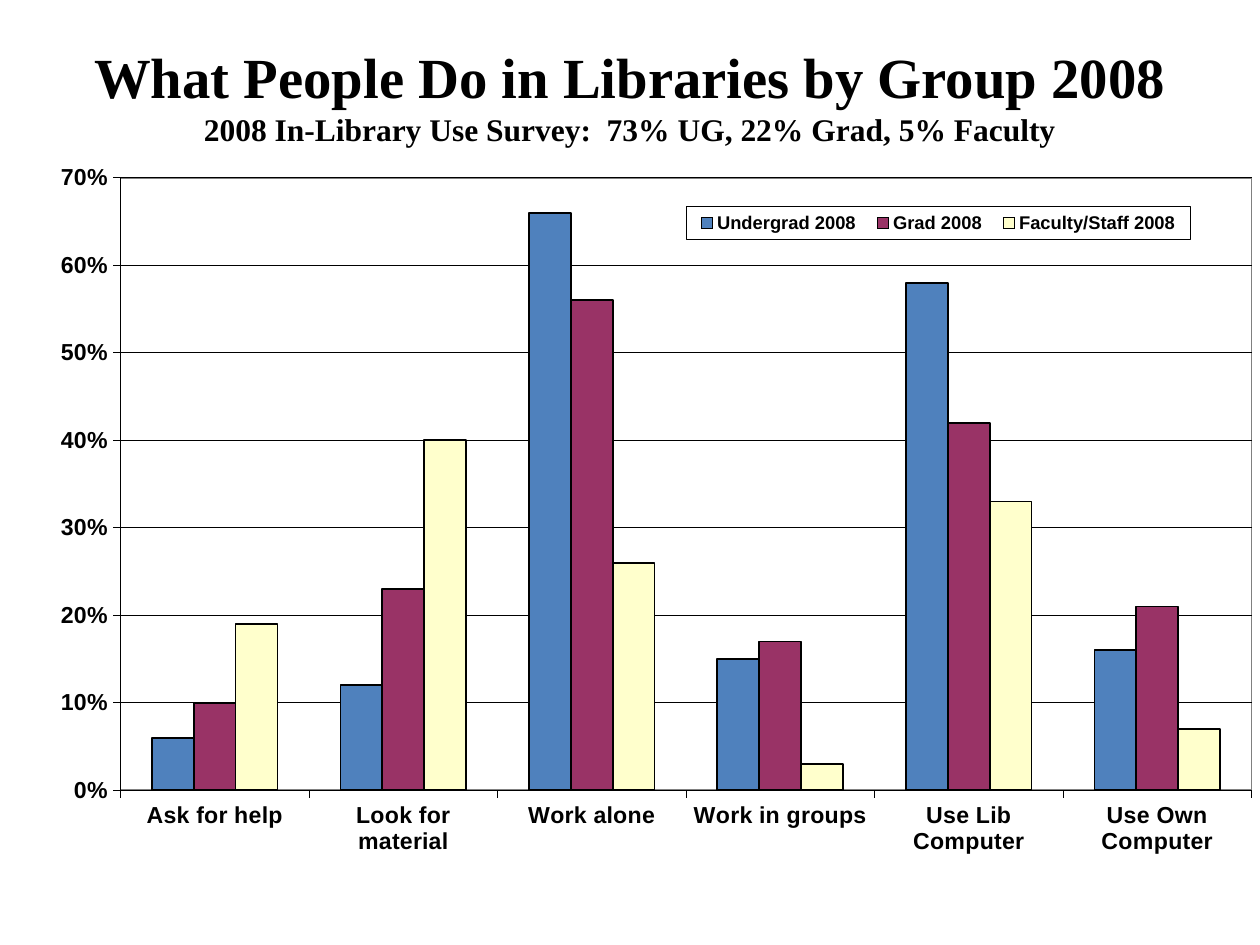
from pptx import Presentation
from pptx.chart.data import CategoryChartData
from pptx.dml.color import RGBColor
from pptx.enum.chart import XL_CHART_TYPE, XL_LEGEND_POSITION, XL_TICK_MARK
from pptx.enum.text import MSO_ANCHOR, PP_ALIGN
from pptx.oxml import parse_xml
from pptx.oxml.ns import nsdecls, qn
from pptx.util import Inches, Pt

rgb = RGBColor.from_string
BLACK, WHITE, GREY = "000000", "FFFFFF", "808080"


def place(element, index, shares, inner=False):
    """Set a manual layout, given as left, top, width, height shares of the chart."""
    for old in element.findall(qn("c:layout")):
        element.remove(old)
    target = '<c:layoutTarget val="inner"/>' if inner else ""
    modes = '<c:xMode val="edge"/><c:yMode val="edge"/>'
    sizes = "".join(f'<c:{name} val="{share}"/>' for name, share in zip("xywh", shares))
    element.insert(index, parse_xml(
        f'<c:layout {nsdecls("c")}><c:manualLayout>{target}{modes}{sizes}'
        '</c:manualLayout></c:layout>'))


def white_frame(line_color, points):
    return parse_xml(
        f'<c:spPr {nsdecls("c", "a")}>'
        f'<a:solidFill><a:srgbClr val="{WHITE}"/></a:solidFill>'
        f'<a:ln w="{Pt(points)}"><a:solidFill><a:srgbClr val="{line_color}"/></a:solidFill></a:ln>'
        '</c:spPr>')


presentation = Presentation()
presentation.slide_width, presentation.slide_height = Inches(10), Inches(7.5)
slide = presentation.slides.add_slide(presentation.slide_layouts[6])

# Title and subtitle
title = slide.shapes.add_textbox(0, Inches(0.25), presentation.slide_width, Inches(1))
frame = title.text_frame
frame.word_wrap = True
frame.vertical_anchor = MSO_ANCHOR.MIDDLE
lines = [("What People Do in Libraries by Group 2008", 32.4),
         ("2008 In-Library Use Survey:  73% UG, 22% Grad, 5% Faculty", 18)]
for number, (text, size) in enumerate(lines):
    paragraph = frame.add_paragraph() if number else frame.paragraphs[0]
    paragraph.alignment = PP_ALIGN.CENTER
    run = paragraph.add_run()
    run.text = text
    run.font.name, run.font.size, run.font.bold = "Times New Roman", Pt(size), True
    run.font.color.rgb = rgb(BLACK)

# Chart data
series_table = [
    ("Undergrad 2008", "4F81BD", (0.06, 0.12, 0.66, 0.15, 0.58, 0.16)),
    ("Grad 2008", "993366", (0.10, 0.23, 0.56, 0.17, 0.42, 0.21)),
    ("Faculty/Staff 2008", "FFFFCC", (0.19, 0.40, 0.26, 0.03, 0.33, 0.07)),
]
chart_data = CategoryChartData(number_format="0%")
chart_data.categories = ["Ask for help", "Look for material", "Work alone",
                         "Work in groups", "Use Lib Computer", "Use Own Computer"]
for name, color, values in series_table:
    chart_data.add_series(name, values)
chart = slide.shapes.add_chart(
    XL_CHART_TYPE.COLUMN_CLUSTERED,
    Inches(0.26), Inches(1.15), Inches(9.68), Inches(6.21), chart_data).chart
chart.has_title = False
chart.has_legend = True

# Bars
plot = chart.plots[0]
plot.vary_by_categories = False
plot.gap_width, plot.overlap = 150, 0
for series, (name, color, values) in zip(plot.series, series_table):
    series.format.fill.solid()
    series.format.fill.fore_color.rgb = rgb(color)
    series.format.line.color.rgb = rgb(BLACK)
    series.format.line.width = Pt(1)

# Axes and gridlines
value_axis, category_axis = chart.value_axis, chart.category_axis
value_axis.minimum_scale, value_axis.maximum_scale, value_axis.major_unit = 0, 0.7, 0.1
value_axis.tick_labels.number_format = "0%"
value_axis.tick_labels.number_format_is_linked = False
value_axis.has_major_gridlines = True
for axis in (value_axis, category_axis):
    axis.major_tick_mark = XL_TICK_MARK.OUTSIDE
for part in (value_axis, category_axis, value_axis.major_gridlines):
    part.format.line.color.rgb = rgb(BLACK)
    part.format.line.width = Pt(0.25)

# Fonts
legend = chart.legend
for font, size, bold in [(chart.font, 9.7, False), (legend.font, 10.5, True),
                         (value_axis.tick_labels.font, 13.2, True),
                         (category_axis.tick_labels.font, 13.2, True)]:
    font.name, font.size, font.bold = "Arial", Pt(size), bold
    font.color.rgb = rgb(BLACK)

# Frames and positions of the plot and the legend
plot_area = chart.element.find(f".//{qn('c:plotArea')}")
place(plot_area, 0, (0.072, 0.042, 0.928, 0.783), inner=True)
plot_area.append(white_frame(GREY, 1))

legend.position = XL_LEGEND_POSITION.RIGHT
legend.include_in_layout = False
legend_element = chart.element.find(f".//{qn('c:legend')}")
place(legend_element, 1, (0.536, 0.078, 0.414, 0.043))
legend_element.find(qn("c:txPr")).addprevious(white_frame(BLACK, 0.25))

presentation.save("out.pptx")
